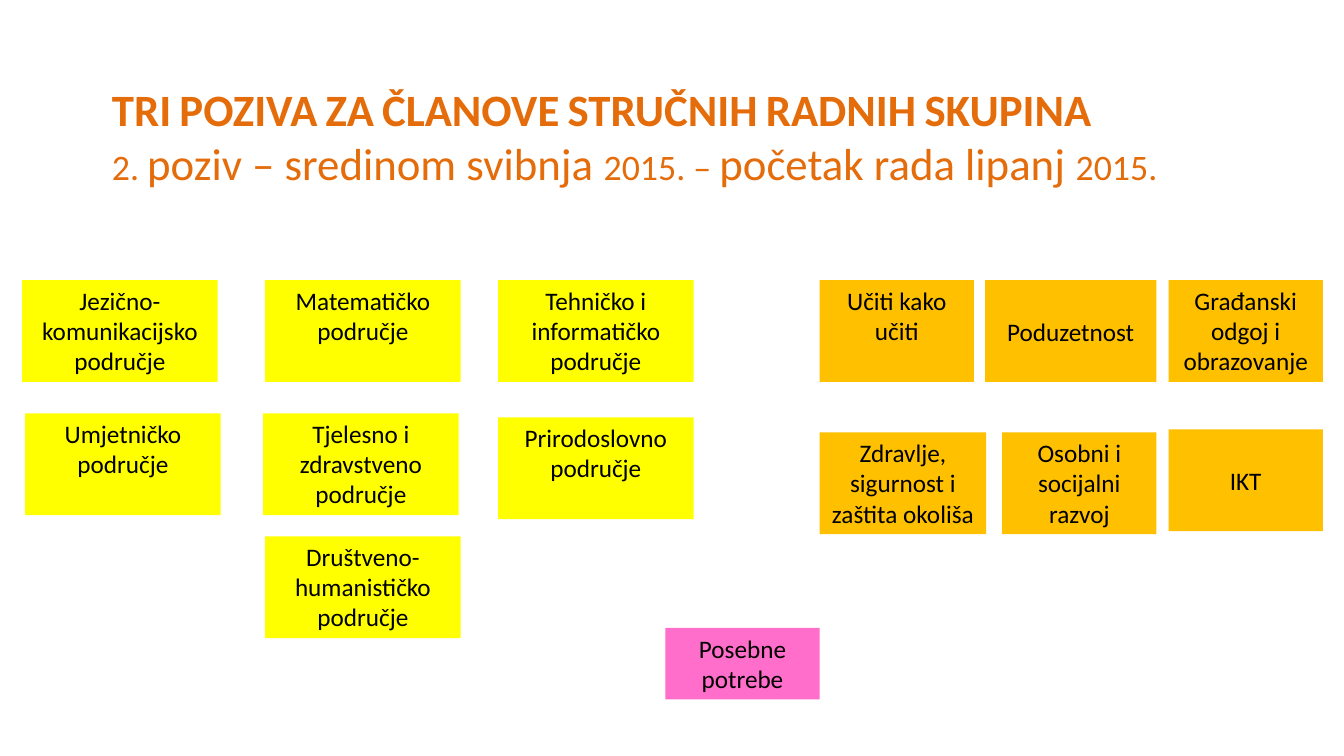
from pptx import Presentation
from pptx.dml.color import RGBColor
from pptx.enum.shapes import MSO_SHAPE
from pptx.enum.text import MSO_ANCHOR, MSO_AUTO_SIZE, PP_ALIGN
from pptx.util import Inches, Pt

RECT = MSO_SHAPE.RECTANGLE
TOP, MIDDLE = MSO_ANCHOR.TOP, MSO_ANCHOR.MIDDLE
LEFT, CENTER = PP_ALIGN.LEFT, PP_ALIGN.CENTER
NO_FIT = MSO_AUTO_SIZE.NONE

BLACK = RGBColor(0x00, 0x00, 0x00)
YELLOW = RGBColor(0xFF, 0xFF, 0x00)
AMBER = RGBColor(0xFF, 0xC0, 0x00)
PINK = RGBColor(0xFF, 0x6E, 0xCA)
ORANGE = RGBColor(0xE4, 0x6C, 0x0A)

TITLE_ONLY = 5
AREA_W, TOPIC_W, BOX_H = 1.94, 1.53, 1.01
ROW_1 = 2.78


class SlideBuilder:
    """Adds styled elements to one slide."""
    font = "Calibri"

    def __init__(self, prs):
        self.slide = prs.slides.add_slide(prs.slide_layouts[TITLE_ONLY])

    def run(self, p, text, size, color, bold=False, small_caps=False):
        r = p.add_run()
        r.text = text
        r.font.name, r.font.size, r.font.bold = self.font, Pt(size), bold
        r.font.color.rgb = color
        if small_caps:
            r.font._element.set("cap", "small")

    def title(self, x, y, w, h, heading, parts):
        sp = self.slide.shapes.title
        sp.left, sp.top, sp.width, sp.height = map(Inches, (x, y, w, h))
        tf = sp.text_frame
        tf.word_wrap, tf.auto_size, tf.vertical_anchor = True, NO_FIT, TOP
        p = tf.paragraphs[0]
        p.alignment = LEFT
        self.run(p, heading, 32, ORANGE, bold=True, small_caps=True)
        p.add_line_break()
        for text, small_caps in parts:
            self.run(p, text, 32, ORANGE, small_caps=small_caps)

    def box(self, text, x, y, w, h, fill, anchor=TOP):
        sp = self.slide.shapes.add_shape(RECT, *map(Inches, (x, y, w, h)))
        sp.shadow.inherit = False
        sp.fill.solid()
        sp.fill.fore_color.rgb = fill
        sp.line.fill.background()
        tf = sp.text_frame
        tf.word_wrap, tf.vertical_anchor = True, anchor
        p = tf.paragraphs[0]
        p.alignment = CENTER
        self.run(p, text, 18, BLACK)


def main():
    prs = Presentation()
    prs.slide_width, prs.slide_height = Inches(13.33), Inches(7.5)
    s = SlideBuilder(prs)

    # Title: small capitals shrink the figures
    s.title(1.01, 0.76, 11.33, 0.7,
            "TRI POZIVA ZA ČLANOVE STRUČNIH RADNIH SKUPINA",
            [("2. ", True), ("poziv – sredinom svibnja ", False),
             ("2015. – ", True), ("početak rada lipanj ", False),
             ("2015.", True)])

    # Subject areas
    areas = [
        ("Jezično-komunikacijsko područje", 0.22, ROW_1),
        ("Matematičko područje", 2.63, ROW_1),
        ("Tehničko i informatičko područje", 4.94, ROW_1),
        ("Umjetničko područje", 0.25, 4.1),
        ("Tjelesno i zdravstveno područje", 2.61, 4.1),
        ("Prirodoslovno područje", 4.94, 4.14),
        ("Društveno-humanističko područje", 2.63, 5.32),
    ]
    for text, x, y in areas:
        s.box(text, x, y, AREA_W, BOX_H, YELLOW)

    # Cross-curricular topics
    topics = [
        ("Učiti kako učiti", 8.13, ROW_1, TOPIC_W, TOP),
        ("Poduzetnost", 9.77, ROW_1, 1.7, MIDDLE),
        ("Građanski odgoj i obrazovanje", 11.59, ROW_1, TOPIC_W, TOP),
        ("Zdravlje, sigurnost i zaštita okoliša", 8.13, 4.29, 1.65, TOP),
        ("Osobni i socijalni razvoj", 9.94, 4.29, TOPIC_W, TOP),
        ("IKT", 11.59, 4.26, TOPIC_W, MIDDLE),
    ]
    for text, x, y, w, anchor in topics:
        s.box(text, x, y, w, BOX_H, AMBER, anchor)

    # Special needs
    s.box("Posebne potrebe", 6.6, 6.23, TOPIC_W, 0.71, PINK)

    prs.save("out.pptx")


if __name__ == "__main__":
    main()
